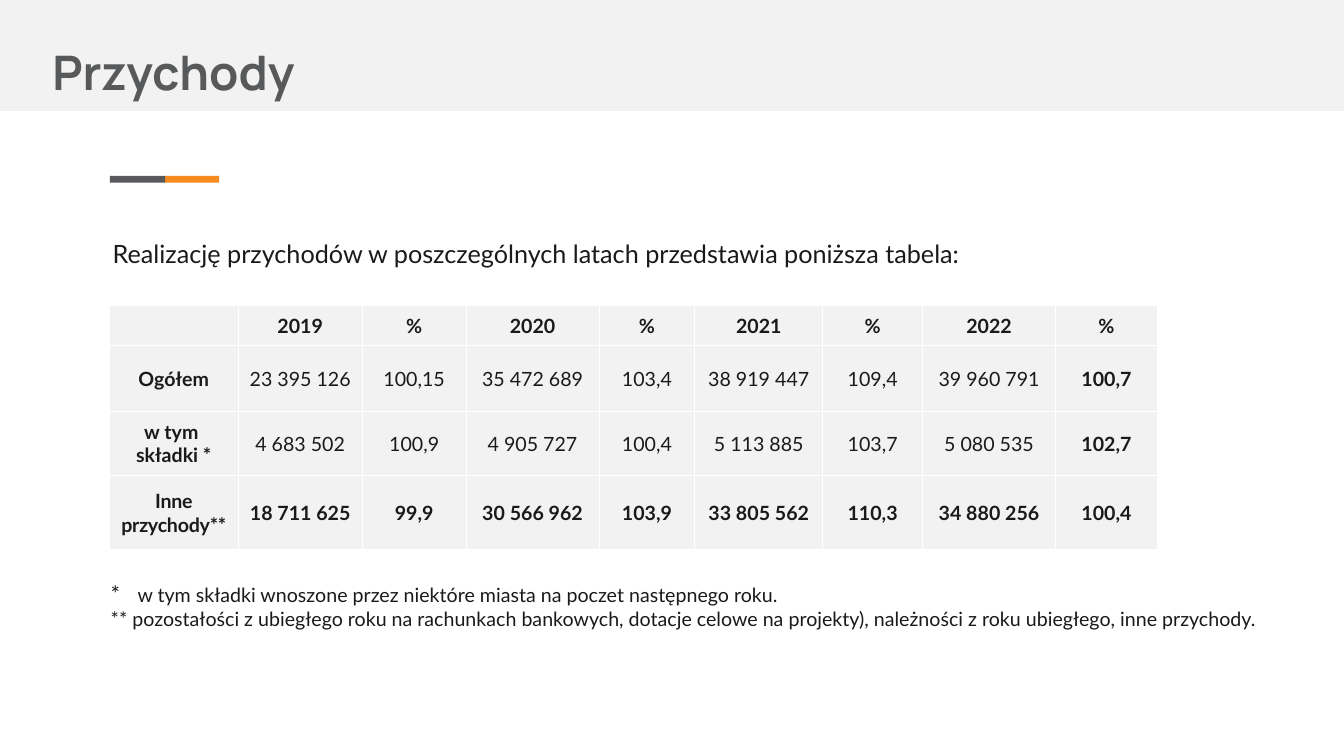
import pptx
import pptx.util
import pptx.dml.color
import pptx.enum.shapes
import pptx.enum.text
import pptx.oxml
import pptx.oxml.ns

Pt = pptx.util.Pt
ALIGN = pptx.enum.text.PP_ALIGN
ANCHOR = pptx.enum.text.MSO_ANCHOR
COLORS = {
    "band": "F2F2F2",
    "accent": "F68B1F",
    "heading": "58595B",
    "text": "1A1A1A",
    "border": "FFFFFF",
}
BODY_FONT = "Lato"
TITLE_FONT = "Manrope"

COLUMN_WIDTHS = [92.2, 88.6, 74.2, 95, 68.4, 91.4, 71.3, 95, 72.7]
ROW_HEIGHTS = [28.8, 46.8, 46.1, 52.6]
INCOME = [
    ["", "2019", "%", "2020", "%", "2021", "%", "2022", "%"],
    ["Ogółem", "23 395 126", "100,15", "35 472 689", "103,4",
     "38 919 447", "109,4", "39 960 791", "100,7"],
    ["w tym \vskładki *", "4 683 502", "100,9", "4 905 727", "100,4",
     "5 113 885", "103,7", "5 080 535", "102,7"],
    ["Inne przychody**", "18 711 625", "99,9", "30 566 962", "103,9",
     "33 805 562", "110,3", "34 880 256", "100,4"],
]


class SlideBuilder:
    def __init__(self, deck):
        self.page = deck.slides.add_slide(deck.slide_layouts[5])

    def color(self, name):
        return pptx.dml.color.RGBColor.from_string(COLORS[name])

    def style(self, font, size, color="text", name=BODY_FONT, bold=False):
        font.name = name
        font.size = Pt(size)
        font.bold = bold
        font.color.rgb = self.color(color)

    def place(self, shape, left, top, width, height):
        shape.left, shape.top = Pt(left), Pt(top)
        shape.width, shape.height = Pt(width), Pt(height)

    def bar(self, left, top, width, height, color):
        bar = self.page.shapes.add_shape(
            pptx.enum.shapes.MSO_SHAPE.RECTANGLE,
            Pt(left), Pt(top), Pt(width), Pt(height))
        bar.shadow.inherit = False
        bar.fill.solid()
        bar.fill.fore_color.rgb = self.color(color)
        bar.line.fill.background()
        return bar

    def title(self, text, left, top, width, height):
        title = self.page.shapes.title
        self.place(title, left, top, width, height)
        frame = title.text_frame
        frame.text = text
        frame.auto_size = pptx.enum.text.MSO_AUTO_SIZE.NONE
        frame.vertical_anchor = ANCHOR.BOTTOM
        frame.margin_left = frame.margin_right = Pt(7.2)
        frame.margin_top = frame.margin_bottom = Pt(7.2)
        para = frame.paragraphs[0]
        para.alignment = ALIGN.LEFT
        para.line_spacing = 1.5
        self.style(para.font, 34, "heading", TITLE_FONT, True)

    def text(self, lines, left, top, width, height, size, tab=None):
        box = self.page.shapes.add_textbox(Pt(left), Pt(top), Pt(width), Pt(height))
        frame = box.text_frame
        frame.word_wrap = True
        frame.text = "\n".join(lines)
        for para in frame.paragraphs:
            if tab:
                tabs = pptx.oxml.parse_xml(
                    f'<a:tabLst {pptx.oxml.ns.nsdecls("a")}>'
                    f'<a:tab pos="{Pt(tab)}" algn="l"/></a:tabLst>')
                para._p.get_or_add_pPr().append(tabs)
            self.style(para.font, size)
        return frame

    def border(self, cell):
        for index, side in enumerate(("lnL", "lnR", "lnT", "lnB")):
            line = pptx.oxml.parse_xml(
                f'<a:{side} {pptx.oxml.ns.nsdecls("a")} w="{Pt(1)}"><a:solidFill>'
                f'<a:srgbClr val="{COLORS["border"]}"/></a:solidFill></a:{side}>')
            cell._tc.get_or_add_tcPr().insert(index, line)

    def cell(self, cell, text, bold):
        cell.text = text
        cell.vertical_anchor = ANCHOR.MIDDLE
        cell.margin_left = cell.margin_right = Pt(5)
        cell.margin_top = cell.margin_bottom = 0
        cell.fill.solid()
        cell.fill.fore_color.rgb = self.color("band")
        self.border(cell)
        para = cell.text_frame.paragraphs[0]
        para.alignment = ALIGN.CENTER
        self.style(para.font, 14, bold=bold)

    def table(self, rows, left, top, widths, heights):
        table = self.page.shapes.add_table(
            len(rows), len(widths), Pt(left), Pt(top),
            Pt(sum(widths)), Pt(sum(heights))).table
        table.horz_banding = False
        for column, width in zip(table.columns, widths):
            column.width = Pt(width)
        for row, height in zip(table.rows, heights):
            row.height = Pt(height)
        last_row, last_column = len(rows) - 1, len(widths) - 1
        for row, values in enumerate(rows):
            for column, value in enumerate(values):
                bold = row in (0, last_row) or column in (0, last_column)
                self.cell(table.cell(row, column), value, bold)
        return table


def main():
    deck = pptx.Presentation()
    deck.slide_width, deck.slide_height = Pt(960), Pt(540)
    builder = SlideBuilder(deck)

    band = builder.bar(0, 0, 960, 79.2, "band")
    builder.page.shapes._spTree.insert(2, band._element)
    builder.bar(117.5, 125.6, 39, 5, "accent")
    builder.bar(78.5, 125.6, 39.5, 5, "heading")
    builder.title("Przychody", 30.2, 0, 807, 78.5)

    builder.text(
        ["Realizację przychodów w poszczególnych latach przedstawia poniższa tabela:"],
        73.4, 167, 791, 29, 18)

    table = builder.table(INCOME, 78, 218.2, COLUMN_WIDTHS, ROW_HEIGHTS)
    other_income = table.cell(3, 0).text_frame.paragraphs[0].runs[0]
    other_income._r.get_or_add_rPr().set("spc", "-20")

    notes = builder.text(
        ["*\tw tym składki wnoszone przez niektóre miasta na poczet następnego roku.",
         "** pozostałości z ubiegłego roku na rachunkach bankowych, dotacje celowe "
         "na projekty), należności z roku ubiegłego, inne przychody."],
        72, 411.1, 857, 44, 14, tab=19.2)
    first_note = notes.paragraphs[0]
    mark, note = first_note.runs[0].text.split("\t")
    first_note.runs[0].text = mark
    first_note.runs[0].font.size = Pt(16)
    first_note.add_run().text = "\t" + note

    deck.save("out.pptx")


if __name__ == "__main__":
    main()
